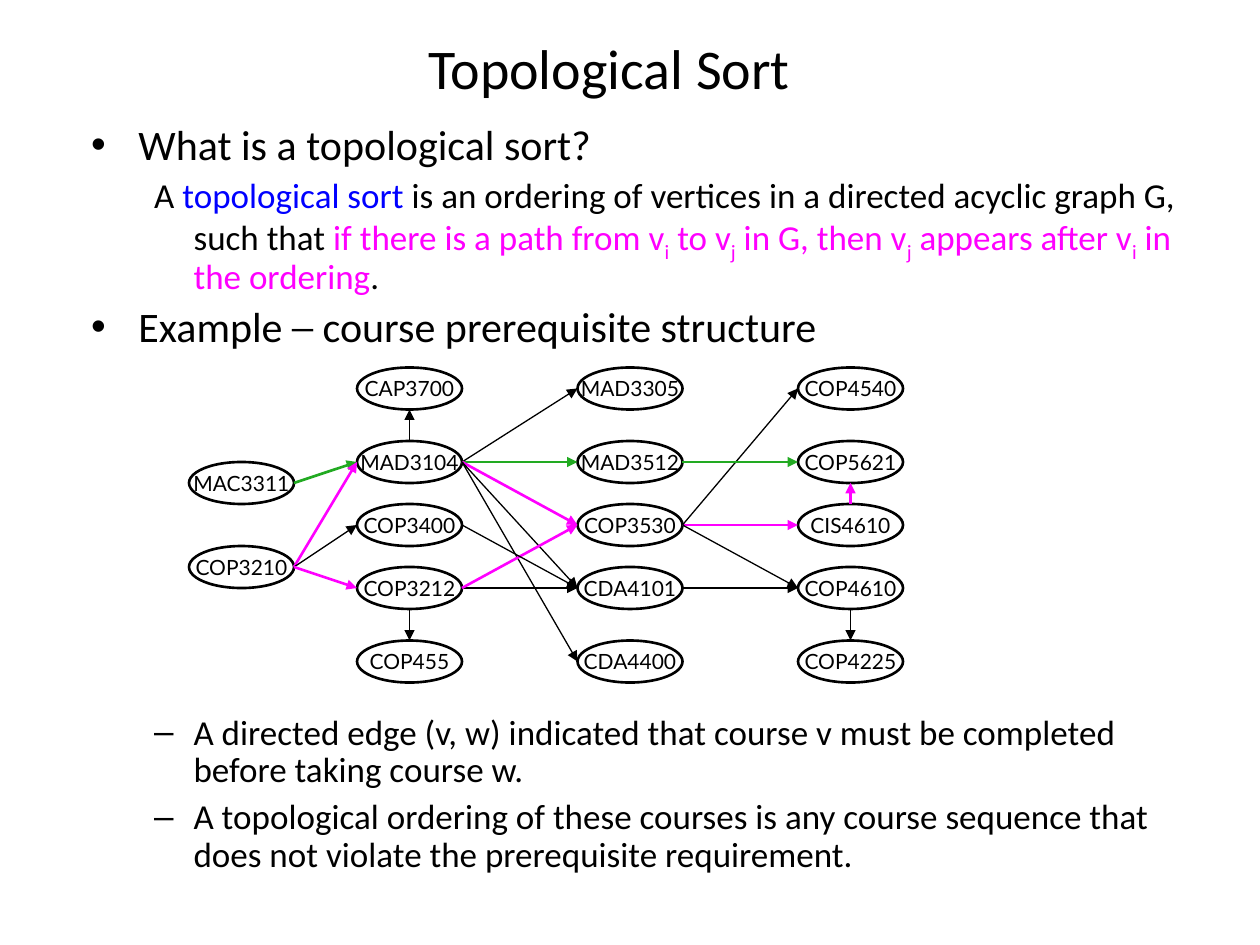
"""Build the slide on topological sort with its course graph."""
from dataclasses import dataclass
from typing import NamedTuple

from lxml.etree import SubElement
from pptx import Presentation
from pptx.dml.color import RGBColor
from pptx.enum.shapes import MSO_CONNECTOR, MSO_SHAPE
from pptx.enum.text import MSO_ANCHOR, PP_ALIGN
from pptx.oxml.ns import qn
from pptx.util import Emu, Pt


@dataclass(frozen=True)
class Theme:
    ink: str = "000000"
    blue: str = "0000FF"
    pink: str = "FF00FF"
    green: str = "22AA22"
    font: str = "Calibri"
    node_font: str = "Lato"
    title: int = 32
    head: int = 24
    text: int = 20
    node: int = 12
    thin: float = 0.75
    thick: float = 1.5


class Box(NamedTuple):
    left: int
    top: int
    width: int
    height: int


class Part(NamedTuple):
    text: str
    color: str
    sub: bool = False


class Level(NamedTuple):
    size: int
    margin: int
    hang: int
    gap: int


class Item(NamedTuple):
    level: Level
    bullet: str
    parts: tuple[Part, ...]


class Node(NamedTuple):
    name: str
    left: int
    top: int


class Edge(NamedTuple):
    start: str
    end: str
    color: str


THEME = Theme()
NODE_W, NODE_H = 80, 32
HEAD = Level(THEME.head, 36, -36, 5)
TEXT = Level(THEME.text, 78, -30, 5)

TITLE = Box(61, 19, 816, 64)
INTRO = Box(60, 90, 854, 186)
NOTES = Box(60, 540, 854, 144)


def plain(text: str) -> tuple[Part, ...]:
    return (Part(text, THEME.ink),)


def pink(text: str, sub: bool = False) -> Part:
    return Part(text, THEME.pink, sub)


INTRO_ITEMS = (
    Item(HEAD, "•", plain("What is a topological sort?")),
    Item(TEXT, "", (
        Part("A ", THEME.ink),
        Part("topological sort", THEME.blue),
        Part(" is an ordering of vertices in a directed acyclic graph G, such that ", THEME.ink),
        pink("if there is a path from v"), pink("i", True),
        pink(" to v"), pink("j", True),
        pink(" in G, then v"), pink("j", True),
        pink(" appears after v"), pink("i", True),
        pink(" in the ordering"),
        Part(".", THEME.ink),
    )),
    Item(HEAD, "•", plain("Example ─ course prerequisite structure")),
)
NOTE_ITEMS = (
    Item(TEXT, "–", plain("A directed edge (v, w) indicated that course v must be "
                          "completed before taking course w.")),
    Item(TEXT, "–", plain("A topological ordering of these courses is any course sequence "
                          "that does not violate the prerequisite requirement.")),
)

ROOTS = (352, 416)
ROWS = (280, 336, 384, 432, 488)
COLUMNS = (
    (144, ROOTS, "MAC3311 COP3210"),
    (272, ROWS, "CAP3700 MAD3104 COP3400 COP3212 COP455"),
    (440, ROWS, "MAD3305 MAD3512 COP3530 CDA4101 CDA4400"),
    (608, ROWS, "COP4540 COP5621 CIS4610 COP4610 COP4225"),
)
NODES = {name: Node(name, left, top)
         for left, tops, names in COLUMNS
         for name, top in zip(names.split(), tops)}
EDGES = (
    Edge("MAC3311", "MAD3104", THEME.green),
    Edge("COP3210", "MAD3104", THEME.pink),
    Edge("COP3210", "COP3400", THEME.ink),
    Edge("COP3210", "COP3212", THEME.pink),
    Edge("MAD3104", "CAP3700", THEME.ink),
    Edge("COP3212", "COP455", THEME.ink),
    Edge("MAD3104", "MAD3305", THEME.ink),
    Edge("MAD3104", "MAD3512", THEME.green),
    Edge("MAD3104", "COP3530", THEME.pink),
    Edge("MAD3104", "CDA4101", THEME.ink),
    Edge("MAD3104", "CDA4400", THEME.ink),
    Edge("COP3212", "CDA4101", THEME.ink),
    Edge("COP3212", "COP3530", THEME.pink),
    Edge("COP3400", "CDA4101", THEME.ink),
    Edge("CDA4101", "COP4610", THEME.ink),
    Edge("COP3530", "CIS4610", THEME.pink),
    Edge("COP3530", "COP4610", THEME.ink),
    Edge("COP3530", "COP4540", THEME.ink),
    Edge("MAD3512", "COP5621", THEME.green),
    Edge("COP4610", "COP4225", THEME.ink),
    Edge("CIS4610", "COP5621", THEME.pink),
)


def px(count: int) -> Emu:
    return Emu(count * 9525)


def style(font, name: str, size: int) -> None:
    font.name, font.size = name, Pt(size)


def add_box(slide, box: Box):
    frame = slide.shapes.add_textbox(*map(px, box)).text_frame
    frame.word_wrap = True
    return frame


def add_title(slide, text: str) -> None:
    frame = add_box(slide, TITLE)
    frame.vertical_anchor = MSO_ANCHOR.MIDDLE
    para = frame.paragraphs[0]
    para.text, para.alignment = text, PP_ALIGN.CENTER
    style(para.font, THEME.font, THEME.title)
    para.font.color.rgb = RGBColor.from_string(THEME.ink)


def add_items(slide, box: Box, items: tuple[Item, ...]) -> None:
    frame = add_box(slide, box)
    for rank, (level, bullet, parts) in enumerate(items):
        para = frame.add_paragraph() if rank else frame.paragraphs[0]
        para.line_spacing, para.space_before = 0.9, Pt(level.gap)
        props = para._p.get_or_add_pPr()
        props.set("marL", str(px(level.margin)))
        props.set("indent", str(px(level.hang)))
        if bullet:
            SubElement(props, qn("a:buFont"), typeface="Arial")
            SubElement(props, qn("a:buChar"), char=bullet)
        else:
            SubElement(props, qn("a:buNone"))
        style(para.font, THEME.font, level.size)
        for part in parts:
            run = para.add_run()
            run.text = part.text
            run.font.color.rgb = RGBColor.from_string(part.color)
            if part.sub:
                run._r.get_or_add_rPr().set("baseline", "-25000")


def add_node(slide, node: Node) -> None:
    shape = slide.shapes.add_shape(
        MSO_SHAPE.OVAL, *map(px, (node.left, node.top, NODE_W, NODE_H)))
    shape.shadow.inherit = False
    shape.fill.background()
    shape.line.color.rgb = RGBColor.from_string(THEME.ink)
    shape.line.width = Pt(THEME.thick)
    frame = shape.text_frame
    frame.word_wrap, frame.vertical_anchor = False, MSO_ANCHOR.MIDDLE
    para = frame.paragraphs[0]
    para.text, para.alignment = node.name, PP_ALIGN.CENTER
    style(para.font, THEME.node_font, THEME.node)
    para.font.color.rgb = RGBColor.from_string(THEME.ink)


def find_ends(start: Node, end: Node) -> tuple[int, int, int, int]:
    if start.left == end.left:
        mid, down = start.left + NODE_W // 2, start.top < end.top
        return mid, start.top + NODE_H * down, mid, end.top + NODE_H * (not down)
    half = NODE_H // 2
    return start.left + NODE_W, start.top + half, end.left, end.top + half


def add_edge(slide, edge: Edge) -> None:
    ends = find_ends(NODES[edge.start], NODES[edge.end])
    link = slide.shapes.add_connector(MSO_CONNECTOR.STRAIGHT, *map(px, ends))
    link.line.color.rgb = RGBColor.from_string(edge.color)
    link.line.width = Pt(THEME.thin if edge.color == THEME.ink else THEME.thick)
    SubElement(link.line._get_or_add_ln(), qn("a:tailEnd"), type="triangle")
    SubElement(link._element.spPr, qn("a:effectLst"))


def main() -> None:
    deck = Presentation()
    deck.slide_width, deck.slide_height = px(960), px(720)
    slide = deck.slides.add_slide(deck.slide_layouts[6])
    add_title(slide, "Topological Sort ")
    add_items(slide, INTRO, INTRO_ITEMS)
    add_items(slide, NOTES, NOTE_ITEMS)
    for node in NODES.values():
        add_node(slide, node)
    for edge in EDGES:
        add_edge(slide, edge)
    deck.save("out.pptx")


if __name__ == "__main__":
    main()
